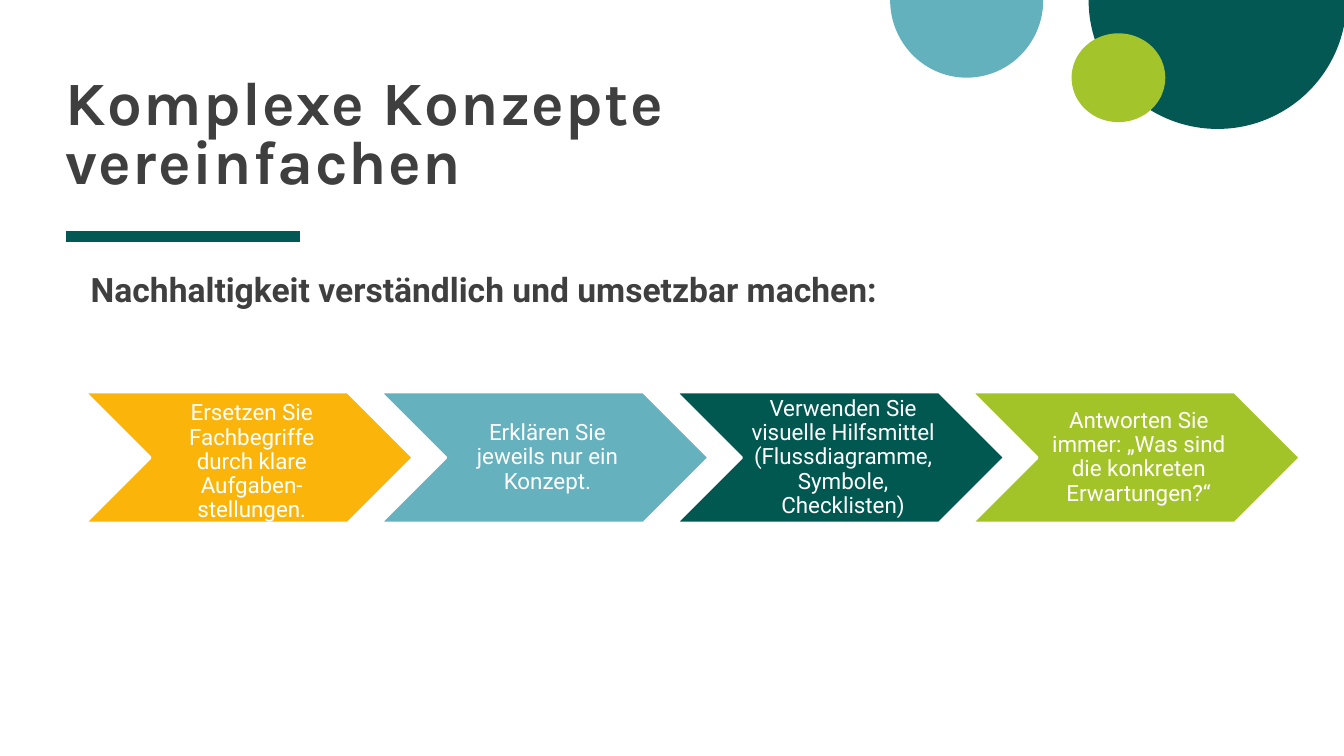
from lxml import etree
from pptx import Presentation
from pptx.dml.color import RGBColor
from pptx.enum.shapes import MSO_CONNECTOR, MSO_SHAPE
from pptx.enum.text import MSO_ANCHOR, PP_ALIGN
from pptx.oxml.ns import qn
from pptx.util import Pt

PIE, OVAL, CHEVRON = MSO_SHAPE.PIE, MSO_SHAPE.OVAL, MSO_SHAPE.CHEVRON
LINE = MSO_CONNECTOR.STRAIGHT
TOP, MIDDLE, BOTTOM = MSO_ANCHOR.TOP, MSO_ANCHOR.MIDDLE, MSO_ANCHOR.BOTTOM
LEFT, CENTER = PP_ALIGN.LEFT, PP_ALIGN.CENTER

DARK, WHITE, GREEN = "3F3F3F", "FFFFFF", "035854"
TITLE = "Komplexe Konzepte vereinfachen"
LEAD = "Nachhaltigkeit verständlich und umsetzbar machen:"
STEPS = [
    ("Ersetzen Sie Fachbegriffe durch klare Aufgaben- stellungen.", "FBB50A", 6.2),
    ("Erklären Sie jeweils nur ein Konzept.", "65B1BE", 0),
    ("Verwenden Sie visuelle Hilfsmittel (Flussdiagramme, Symbole, Checklisten)",
     "005851", 0),
    ("Antworten Sie immer: „Was sind die konkreten Erwartungen?“", "A3C429", 0),
]  # text, fill, extra space above the text
HALF = (0, 108)  # pie angles: lower half of a disc
DISCS = [
    (PIE, (777.6, -92.2, 184.3, 184.3), GREEN, HALF),
    (PIE, (635.8, -55.4, 109.4, 110.9), "64B1BE", HALF),
    (OVAL, (765.4, 23.8, 67, 63.4), "A3C42A", ()),
]
EDGE = 46.8
STEP_X, STEP_Y, STEP_W, STEP_H, PITCH = 60.5, 280.1, 234.7, 93.6, 211.2
TEXT_DX, TEXT_W = 46.8, 141.1


def color(code):
    return RGBColor.from_string(code)


def add_form(kind, box, fill, adj=(), edge=None):
    form = slide.shapes.add_shape(kind, *map(Pt, box))
    form.shadow.inherit = False
    form.fill.solid()
    form.fill.fore_color.rgb = color(fill)
    for i, val in enumerate(adj):
        form.adjustments[i] = val
    if edge:
        form.line.color.rgb = color(edge)
        form.line.width = Pt(2)
    else:
        form.line.fill.background()


def add_text(box, text, font, size, tint, space, bold=False, anchor=TOP,
             align=LEFT, pads=(0, 0, 0, 0)):
    """Add a wrapped one-paragraph box; pads are left, top, right, bottom."""
    frame = slide.shapes.add_textbox(*map(Pt, box)).text_frame
    frame.word_wrap = True
    frame.vertical_anchor = anchor
    (frame.margin_left, frame.margin_top,
     frame.margin_right, frame.margin_bottom) = map(Pt, pads)
    para = frame.paragraphs[0]
    para.text = text
    para.alignment = align
    para.line_spacing = space
    para.font.name = font
    para.font.size = Pt(size)
    para.font.bold = bold
    para.font.color.rgb = color(tint)
    return para


deck = Presentation()
deck.slide_width, deck.slide_height = Pt(960), Pt(540)
slide = deck.slides.add_slide(deck.slide_layouts[6])

for kind, box, fill, adj in DISCS:
    add_form(kind, box, fill, adj)

rule = slide.shapes.add_connector(LINE, Pt(EDGE), Pt(169.2), Pt(214.6), Pt(169.2))
rule.line.color.rgb = color(GREEN)
rule.line.width = Pt(8)
etree.SubElement(rule._element.spPr, qn("a:effectLst"))

head = add_text((EDGE, 15.1, 534.2, 125.3), TITLE, "Karla", 44, DARK, 0.8,
                bold=True, anchor=BOTTOM)
head.runs[0].font._element.set("spc", "100")
add_text((EDGE, 180, 806.4, 81.4), LEAD, "Roboto", 24, DARK, 0.8,
         bold=True, pads=(18, 18, 0, 0))

for i, (text, fill, drop) in enumerate(STEPS):
    x = STEP_X + i * PITCH
    add_form(CHEVRON, (x, STEP_Y, STEP_W, STEP_H), fill, (0.5,), WHITE)
    add_text((x + TEXT_DX, STEP_Y + drop, TEXT_W, STEP_H - drop), text,
             "Roboto", 16, WHITE, 0.9, anchor=MIDDLE, align=CENTER,
             pads=(6, 2, 2, 2))

deck.save("out.pptx")
